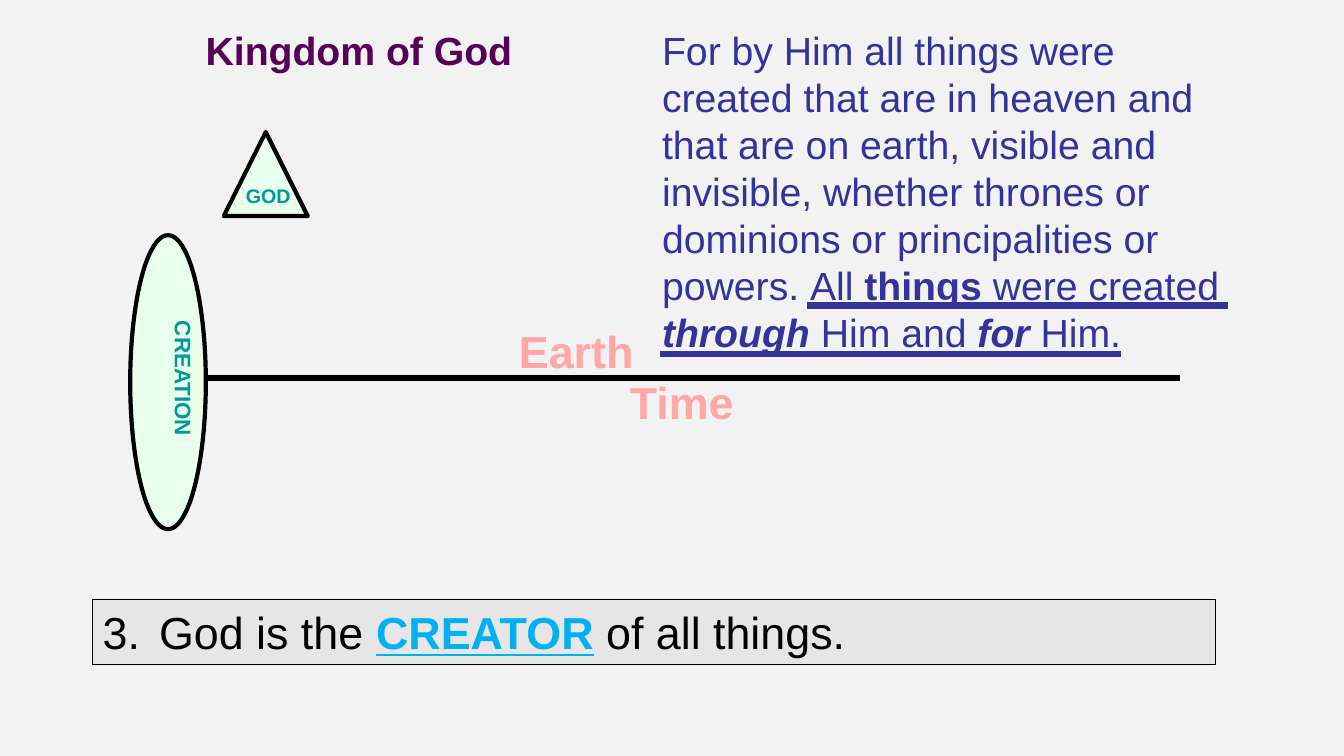
"""Build the Kingdom of God slide about God as the Creator of all things."""
from dataclasses import dataclass

from lxml.etree import SubElement
from pptx import Presentation
from pptx.dml.color import RGBColor
from pptx.enum.shapes import MSO_CONNECTOR, MSO_SHAPE
from pptx.enum.text import MSO_ANCHOR, MSO_AUTO_SIZE, PP_ALIGN
from pptx.oxml.ns import qn
from pptx.util import Inches, Pt

COLORS = {
    "background": "F2F2F2", "mint": "E7FFEB", "black": "000000", "teal": "009999",
    "pink": "FFA7A9", "purple": "560056", "indigo": "333399", "gray": "E6E6E6", "sky": "00B0F0",
}
SLIDE_WIDTH, SLIDE_HEIGHT = Inches(13.33), Inches(7.5)
COLUMN, ROW = SLIDE_WIDTH / 160, SLIDE_HEIGHT / 90


@dataclass(frozen=True)
class Box:
    column: float
    row: float
    columns: float
    rows: float

    def emu(self) -> tuple[int, int, int, int]:
        return (round(self.column * COLUMN), round(self.row * ROW),
                round(self.columns * COLUMN), round(self.rows * ROW))


@dataclass(frozen=True)
class Piece:
    text: str
    color: str
    size: float
    bold: bool = False
    italic: bool = False
    underline: bool = False


@dataclass(frozen=True)
class Label:
    box: Box
    pieces: tuple[Piece, ...]
    rotation: float = 0


@dataclass(frozen=True)
class Figure:
    kind: MSO_SHAPE
    box: Box
    fill: str
    line_width: float


@dataclass(frozen=True)
class Rule:
    start: float
    end: float
    row: float
    color: str
    width: float


FIGURES = (
    Figure(MSO_SHAPE.OVAL, Box(15.5, 28, 9, 35), "mint", 3),
    Figure(MSO_SHAPE.ISOSCELES_TRIANGLE, Box(26.64, 15.72, 10, 10), "mint", 3),
)
TITLE = Label(Box(23.28, 2.52, 39.24, 6.84), (Piece("Kingdom of God", "purple", 28, True),))
LABELS = (
    Label(Box(12.84, 43.8, 18, 4.44), (Piece("CREATION", "teal", 16, True),), 90),
    Label(Box(28.08, 21.36, 10, 4), (Piece("GOD", "teal", 14, True),)),
    Label(Box(60.6, 37.92, 24.6, 7.56), (Piece("Earth", "pink", 32, True),)),
    Label(Box(73.8, 44.04, 24.6, 7.56), (Piece("Time", "pink", 32, True),)),
    Label(Box(77.64, 2.52, 72.36, 40.8), (
        Piece("For by Him all things were created that are in heaven and that are on earth, "
              "visible and invisible, whether thrones or dominions or principalities or powers. ",
              "indigo", 28),
        Piece("All", "indigo", 28, underline=True),
        Piece(" ", "indigo", 28),
        Piece("things", "indigo", 28, True),
        Piece(" were created ", "indigo", 28),
        Piece("through", "indigo", 28, True, True),
        Piece(" Him and ", "indigo", 28),
        Piece("for", "indigo", 28, True, True),
        Piece(" Him.", "indigo", 28),
    )),
)
STATEMENT_FIGURE = Figure(MSO_SHAPE.RECTANGLE, Box(11.04, 71.4, 133.68, 7.68), "gray", 0.75)
STATEMENT = (
    Piece("God is the ", "black", 32),
    Piece("CREATOR", "sky", 32, True, underline=True),
    Piece(" of all things.", "black", 32),
)
RULES = (
    Rule(24.5, 140.5, 45, "black", 4),
    Rule(96.12, 146.16, 36.36, "indigo", 4.5),
    Rule(78.6, 133.44, 42.12, "indigo", 4.5),
)


def rgb(name: str) -> RGBColor:
    return RGBColor.from_string(COLORS[name])


def write(shape, pieces: tuple[Piece, ...], anchor=MSO_ANCHOR.TOP):
    frame = shape.text_frame
    frame.word_wrap = True
    frame.auto_size = MSO_AUTO_SIZE.NONE
    frame.vertical_anchor = anchor
    paragraph = frame.paragraphs[0]
    paragraph.alignment = PP_ALIGN.LEFT
    paragraph.line_spacing = 1
    paragraph.space_before = Pt(0)
    for piece in pieces:
        run = paragraph.add_run()
        run.text = piece.text
        font = run.font
        font.name, font.size = "Arial", Pt(piece.size)
        font.bold, font.italic, font.underline = piece.bold, piece.italic, piece.underline
        font.color.rgb = rgb(piece.color)
    return paragraph


def add_figure(slide, figure: Figure):
    shape = slide.shapes.add_shape(figure.kind, *figure.box.emu())
    shape.shadow.inherit = False
    shape.fill.solid()
    shape.fill.fore_color.rgb = rgb(figure.fill)
    shape.line.color.rgb = rgb("black")
    shape.line.width = Pt(figure.line_width)
    return shape


def add_label(slide, label: Label) -> None:
    shape = slide.shapes.add_textbox(*label.box.emu())
    shape.rotation = label.rotation
    write(shape, label.pieces)


def add_rule(slide, rule: Rule) -> None:
    start, end, height = round(rule.start * COLUMN), round(rule.end * COLUMN), round(rule.row * ROW)
    connector = slide.shapes.add_connector(MSO_CONNECTOR.STRAIGHT, start, height, end, height)
    connector.line.color.rgb = rgb(rule.color)
    connector.line.width = Pt(rule.width)
    SubElement(connector.element.spPr, qn("a:effectLst"))


def add_statement(slide) -> None:
    shape = add_figure(slide, STATEMENT_FIGURE)
    paragraph = write(shape, STATEMENT, MSO_ANCHOR.MIDDLE)
    properties = paragraph._p.get_or_add_pPr()
    properties.set("marL", str(Inches(0.56)))
    properties.set("indent", str(-Inches(0.56)))
    SubElement(properties, qn("a:buFont"), typeface="+mj-lt")
    SubElement(properties, qn("a:buAutoNum"), type="arabicPeriod", startAt="3")


def place_title(slide) -> None:
    title = slide.shapes.title
    title.left, title.top, title.width, title.height = TITLE.box.emu()
    write(title, TITLE.pieces)


def main() -> None:
    presentation = Presentation()
    presentation.slide_width, presentation.slide_height = SLIDE_WIDTH, SLIDE_HEIGHT
    slide = presentation.slides.add_slide(presentation.slide_layouts[5])
    slide.background.fill.solid()
    slide.background.fill.fore_color.rgb = rgb("background")
    place_title(slide)
    for figure in FIGURES:
        add_figure(slide, figure)
    for label in LABELS:
        add_label(slide, label)
    add_statement(slide)
    for rule in RULES:
        add_rule(slide, rule)
    presentation.save("out.pptx")


if __name__ == "__main__":
    main()
